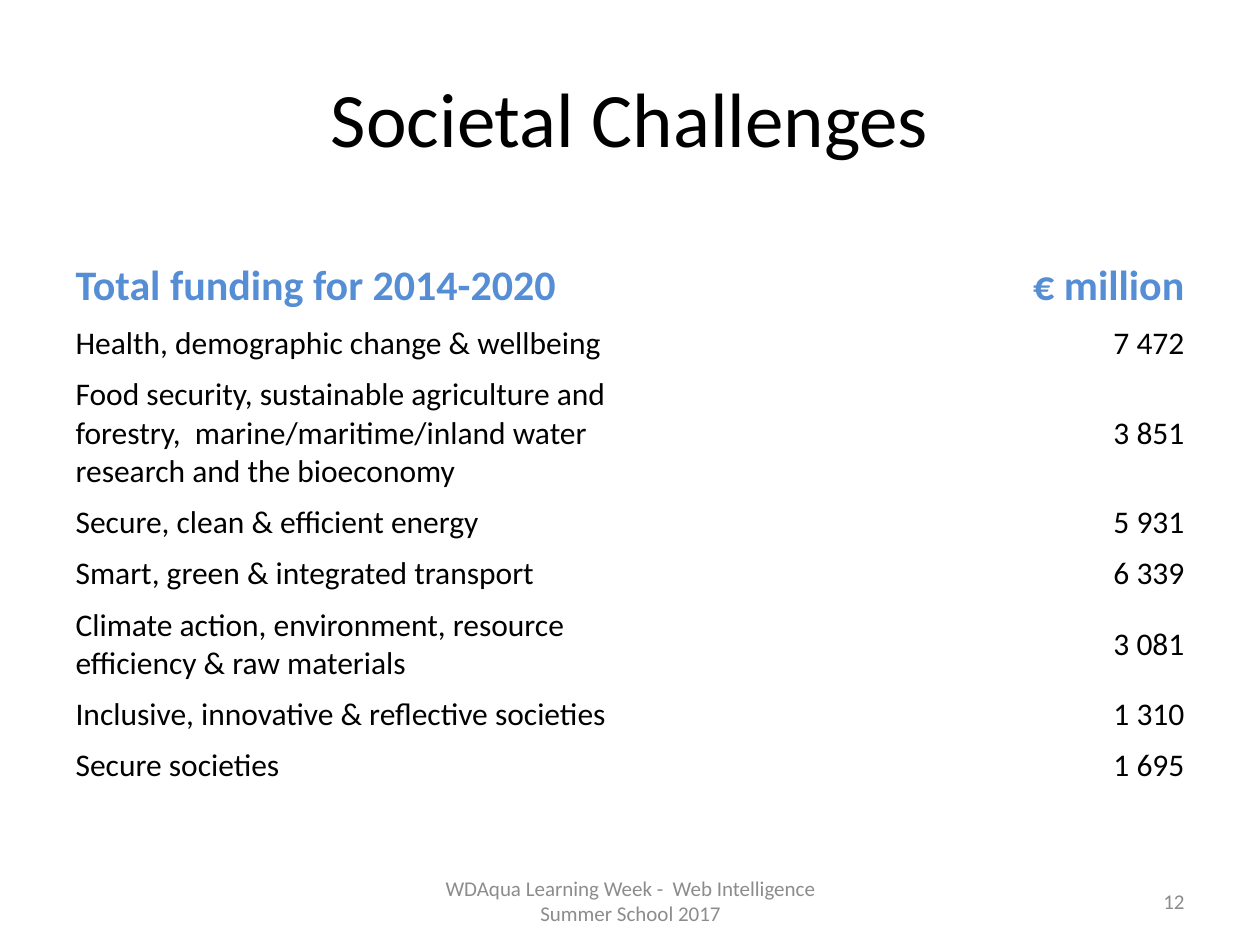
from pptx import Presentation
from pptx.dml.color import RGBColor
from pptx.enum.text import MSO_ANCHOR as Anchor, PP_ALIGN as Align
from pptx.util import Inches, Pt

COLORS = {"text": "000000", "heading": "558ED5", "footer": "8C8C8C"}
FONT = "Calibri"
HEADINGS = ("Total funding for 2014-2020", "€ million")
FUNDING = [
    ("Health, demographic change & wellbeing", "7 472", 1),
    ("Food security, sustainable agriculture and forestry,  "
     "marine/maritime/inland water research and the bioeconomy", "3 851", 3),
    ("Secure, clean & efficient energy", "5 931", 1),
    ("Smart, green & integrated transport", "6 339", 1),
    ("Climate action, environment, resource efficiency & raw materials", "3 081", 2),
    ("Inclusive, innovative & reflective societies", "1 310", 1),
    ("Secure societies", "1 695", 1),
]


def write_text(frame, text, size=18, color="text", bold=False, align=Align.LEFT):
    frame.word_wrap = True
    para = frame.paragraphs[0]
    para.alignment = align
    span = para.add_run()
    span.text = text
    span.font.name = FONT
    span.font.size = Pt(size)
    span.font.bold = bold
    span.font.color.rgb = RGBColor.from_string(COLORS[color])


def add_title(page, left, top, width, height):
    title = page.shapes.title
    title.left, title.top = Inches(left), Inches(top)
    title.width, title.height = Inches(width), Inches(height)
    title.text_frame.vertical_anchor = Anchor.MIDDLE
    write_text(title.text_frame, "Societal Challenges", size=44, align=Align.CENTER)


def fill_row(table, index, texts, height, **style):
    table.rows[index].height = Inches(height)
    for cell, text, align in zip(table.rows[index].cells, texts, (Align.LEFT, Align.RIGHT)):
        cell.fill.background()
        cell.vertical_anchor = Anchor.MIDDLE
        write_text(cell.text_frame, text, align=align, **style)


def add_funding_table(page, left, top, width, height):
    table = page.shapes.add_table(len(FUNDING) + 1, 2, Inches(left), Inches(top),
                                  Inches(width), Inches(height)).table
    table.first_row = False
    table.horz_banding = False
    fill_row(table, 0, HEADINGS, 0.5, size=24, color="heading", bold=True)
    for index, (challenge, amount, lines) in enumerate(FUNDING, 1):
        fill_row(table, index, (challenge, amount), 0.1 + 0.3 * lines)


def add_footer(page, left, top, width, height, text, align):
    box = page.shapes.add_textbox(Inches(left), Inches(top), Inches(width), Inches(height))
    box.text_frame.vertical_anchor = Anchor.MIDDLE
    write_text(box.text_frame, text, size=12, color="footer", align=align)


def main():
    deck = Presentation()
    deck.slide_width, deck.slide_height = Inches(10), Inches(7.5)
    page = deck.slides.add_slide(deck.slide_layouts[5])
    add_title(page, 0.5, 0.3, 9, 1.25)
    add_funding_table(page, 0.5, 2.02, 9, 4.2)
    add_footer(page, 7.17, 6.95, 2.33, 0.4, "12", Align.RIGHT)
    add_footer(page, 3.42, 6.95, 3.17, 0.4,
               "WDAqua Learning Week -  Web Intelligence Summer School 2017", Align.CENTER)
    deck.save("out.pptx")


if __name__ == "__main__":
    main()
